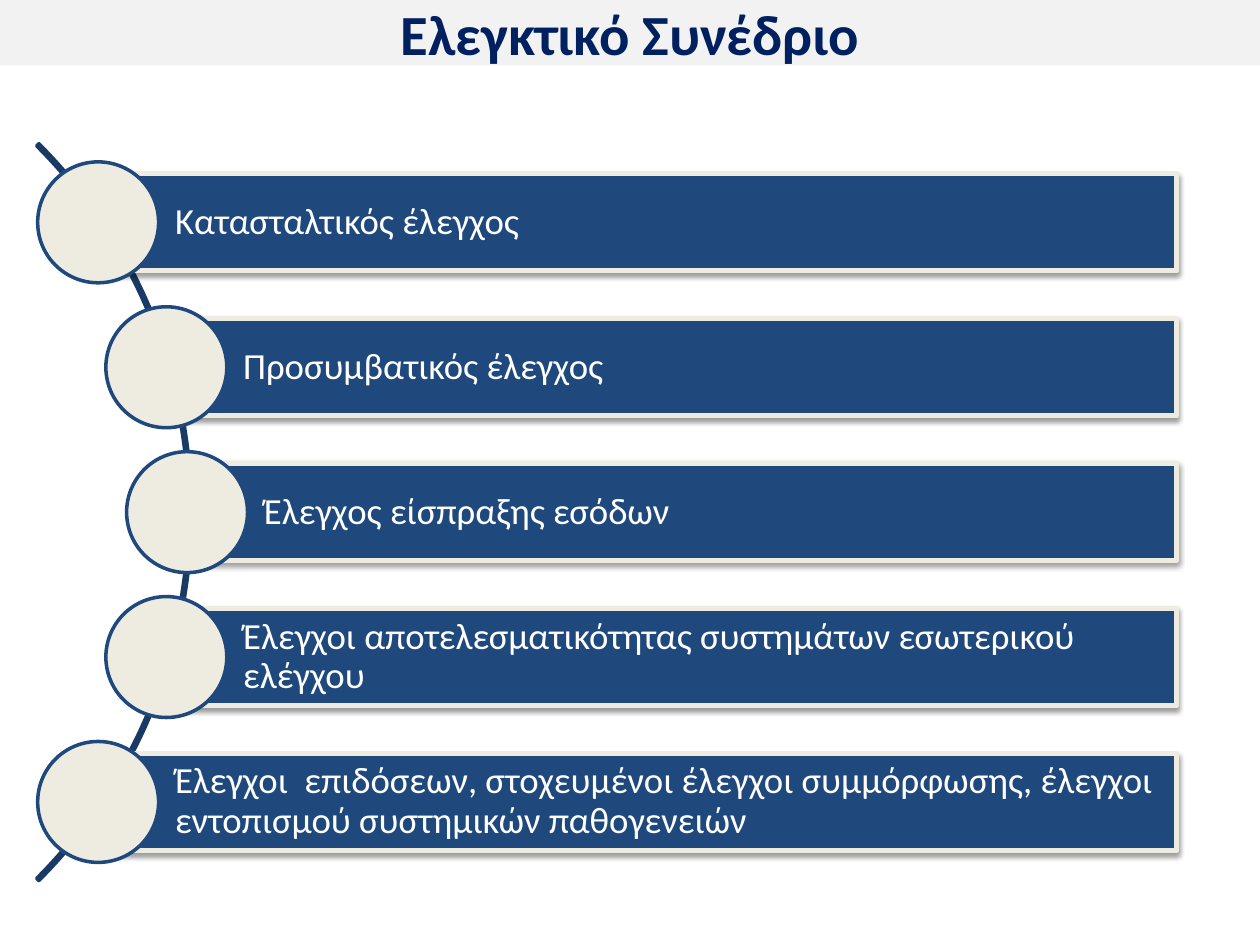
"""Build the slide on the audit types of the Court of Audit."""
from math import sqrt

from lxml import etree
from pptx import Presentation
from pptx.dml.color import RGBColor
from pptx.enum.shapes import MSO_SHAPE
from pptx.enum.text import MSO_ANCHOR, PP_ALIGN
from pptx.util import Inches, Pt

RECT, OVAL, ARC = MSO_SHAPE.RECTANGLE, MSO_SHAPE.OVAL, MSO_SHAPE.BLOCK_ARC
MIDDLE, LEFT, CENTER = MSO_ANCHOR.MIDDLE, PP_ALIGN.LEFT, PP_ALIGN.CENTER
NAVY, CREAM = "1F497D", "EEECE1"
SHADOW = (
    '<a:effectLst xmlns:a="http://schemas.openxmlformats.org/drawingml/2006/main">'
    '<a:outerShdw blurRad="39370" dist="20320" dir="5400000" rotWithShape="0">'
    '<a:srgbClr val="000000"><a:alpha val="38000"/></a:srgbClr>'
    "</a:outerShdw></a:effectLst>"
)

AUDITS = [
    "Κατασταλτικός έλεγχος",
    "Προσυμβατικός έλεγχος",
    "Έλεγχος είσπραξης εσόδων",
    "Έλεγχοι αποτελεσματικότητας συστημάτων εσωτερικού ελέγχου",
    "Έλεγχοι  επιδόσεων, στοχευμένοι έλεγχοι συμμόρφωσης, έλεγχοι "
    "εντοπισμού συστημικών παθογενειών",
]
ROW, BAR_HEIGHT, BAR_RIGHT, DISC = 1.15, 0.77, 9.34, 0.96
ARC_X, ARC_Y, ARC_SIZE, DISC_ORBIT = -2.615, 4.065, 8.27, 4.1

prs = Presentation()
prs.slide_width, prs.slide_height = Inches(10), Inches(7.5)
slide = prs.slides.add_slide(prs.slide_layouts[6])


def add_block(kind, box, fill=None, line=None, width=0):
    block = slide.shapes.add_shape(kind, *map(Inches, box))
    block.shadow.inherit = False
    for part, color in ((block.fill, fill), (block.line.fill, line)):
        if color:
            part.solid()
            part.fore_color.rgb = RGBColor.from_string(color)
        else:
            part.background()
    if line:
        block.line.width = Pt(width)
    return block


def write(block, text, size, color, bold, align, inset):
    frame = block.text_frame
    frame.word_wrap = True
    margins = {"margin_left": inset, "margin_right": 0.06,
               "margin_top": 0.06, "margin_bottom": 0.06}
    for side, value in margins.items():
        setattr(frame, side, Inches(value))
    frame.vertical_anchor = MIDDLE
    paragraph = frame.paragraphs[0]
    paragraph.alignment = align
    run = paragraph.add_run()
    run.text = text
    for key, value in {"name": "Calibri", "size": Pt(size), "bold": bold}.items():
        setattr(run.font, key, value)
    run.font.color.rgb = RGBColor.from_string(color)
    return paragraph


heading = add_block(RECT, (0, 0, 10, 0.52), "F2F2F2")
write(heading, "Ελεγκτικό Συνέδριο", 32.4, "002060", True, CENTER, 0.06)

spine = add_block(
    ARC, (ARC_X - ARC_SIZE / 2, ARC_Y - ARC_SIZE / 2, ARC_SIZE, ARC_SIZE),
    None, "193A64", 2)
for index, value in enumerate((189, 27, 0.003)):
    spine.adjustments[index] = value

for index, audit in enumerate(AUDITS):
    offset = (index - len(AUDITS) // 2) * ROW
    x, y = ARC_X + sqrt(DISC_ORBIT ** 2 - offset ** 2), ARC_Y + offset
    bar = add_block(RECT, (x, y - BAR_HEIGHT / 2, BAR_RIGHT - x, BAR_HEIGHT),
                    NAVY, CREAM, 3)
    properties = bar.element.spPr
    properties.remove(properties[-1])
    properties.append(etree.fromstring(SHADOW))
    write(bar, audit, 21, "FFFFFF", False, LEFT, 0.61).line_spacing = 0.9
    add_block(OVAL, (x - DISC / 2, y - DISC / 2, DISC, DISC), CREAM, NAVY, 2)

prs.save("out.pptx")
